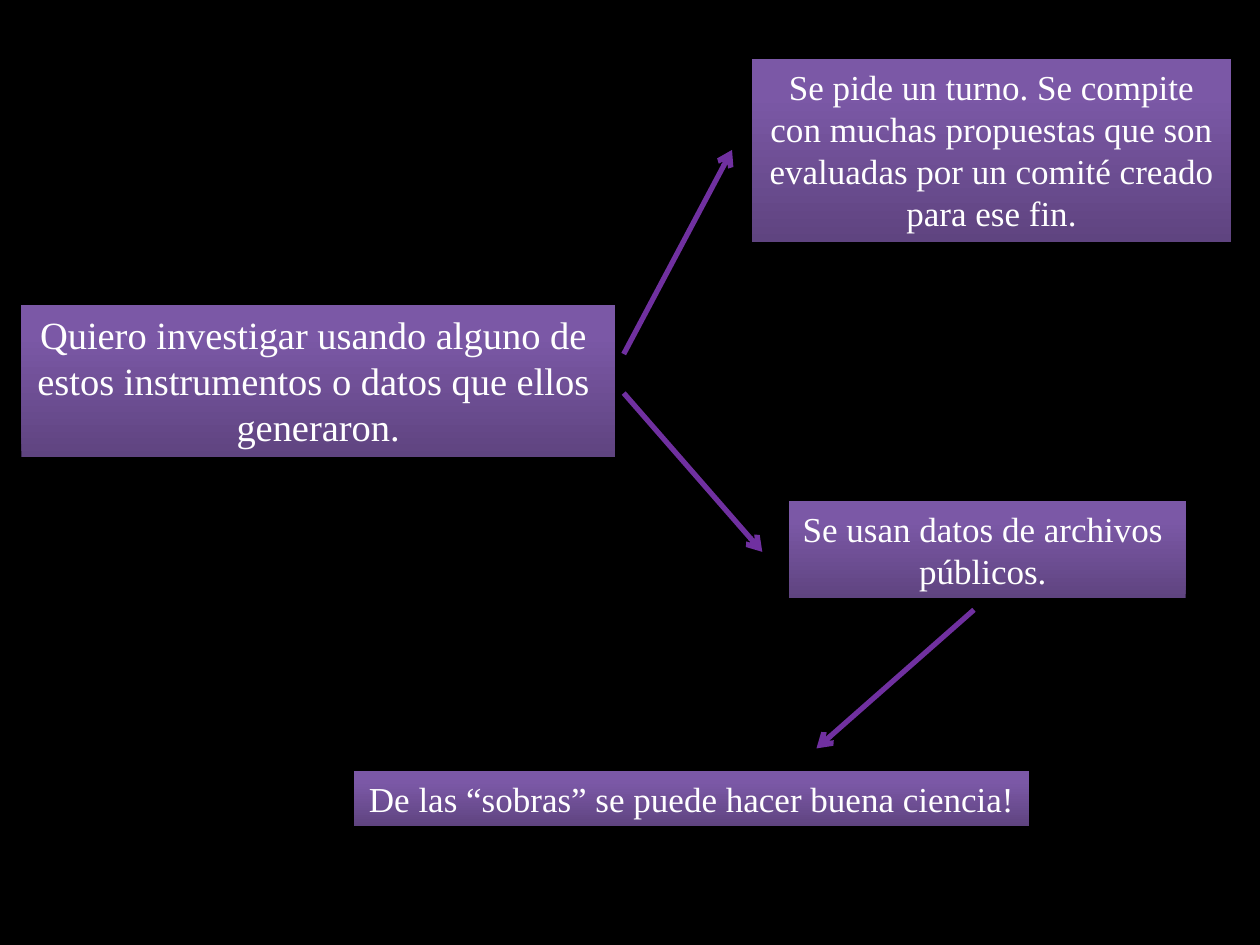
from copy import deepcopy
from dataclasses import dataclass

from lxml import etree
from pptx import Presentation
from pptx.dml.color import RGBColor
from pptx.enum.shapes import MSO_CONNECTOR, MSO_SHAPE
from pptx.enum.text import MSO_ANCHOR, MSO_AUTO_SIZE, PP_ALIGN
from pptx.oxml.ns import qn
from pptx.util import Inches, Pt

RECT = MSO_SHAPE.RECTANGLE
LINE = MSO_CONNECTOR.STRAIGHT
TOP = MSO_ANCHOR.TOP
GROW = MSO_AUTO_SIZE.SHAPE_TO_FIT_TEXT
CENTER = PP_ALIGN.CENTER
BLANK = 6
WIDE, HIGH = 10, 7.5
COLS, ROWS = 100, 75


@dataclass(frozen=True)
class Theme:
    font: str = "Times New Roman"
    back: str = "000000"
    ink: str = "FFFFFF"
    arrow: str = "7030A0"
    fade: tuple = ((0, "5F4480"), (0.8, "7B58A6"), (1, "7C57A8"))
    large: int = 22
    body: int = 20
    stroke: int = 3


def rgb(code):
    return RGBColor.from_string(code)


class Board:
    """Draws on one slide, with places given in grid columns and rows."""

    def __init__(self, deck, theme):
        self.theme = theme
        self.col = Inches(WIDE) / COLS
        self.row = Inches(HIGH) / ROWS
        self.slide = deck.slides.add_slide(deck.slide_layouts[BLANK])
        back = self.slide.background.fill
        back.solid()
        back.fore_color.rgb = rgb(theme.back)

    def spot(self, x, y):
        return round(x * self.col), round(y * self.row)

    def shade(self, shape):
        fill = shape.fill
        fill.gradient()
        fill.gradient_angle = 90
        # A new gradient has two stops; the theme has three
        stops = shape._element.spPr.find(qn("a:gradFill")).find(qn("a:gsLst"))
        stops.append(deepcopy(stops[0]))
        for stop, (place, code) in zip(fill.gradient_stops, self.theme.fade):
            stop.position = place
            stop.color.rgb = rgb(code)

    def box(self, x, y, wide, high, lines, size):
        shape = self.slide.shapes.add_shape(
            RECT, *self.spot(x, y), *self.spot(wide, high))
        shape.shadow.inherit = False
        shape.line.fill.background()
        self.shade(shape)
        frame = shape.text_frame
        frame.word_wrap = False
        frame.auto_size = GROW
        frame.vertical_anchor = TOP
        for i, line in enumerate(lines):
            par = frame.add_paragraph() if i else frame.paragraphs[0]
            par.text = line
            par.alignment = CENTER
            par.font.name = self.theme.font
            par.font.size = Pt(size)
            par.font.color.rgb = rgb(self.theme.ink)

    def arrow(self, start, end):
        link = self.slide.shapes.add_connector(
            LINE, *self.spot(*start), *self.spot(*end))
        link.line.color.rgb = rgb(self.theme.arrow)
        link.line.width = Pt(self.theme.stroke)
        etree.SubElement(link.line._get_or_add_ln(), qn("a:tailEnd"), type="arrow")
        etree.SubElement(link._element.spPr, qn("a:effectLst"))


def main():
    deck = Presentation()
    deck.slide_width, deck.slide_height = Inches(WIDE), Inches(HIGH)
    theme = Theme()
    board = Board(deck, theme)

    # Starting wish
    board.box(1.7, 24.2, 47.1, 12.1, (
        "Quiero investigar usando alguno de ",
        "estos instrumentos o datos que ellos ",
        "generaron."), theme.large)

    # First way: ask for observing time
    board.arrow((49.5, 28.1), (58.1, 11.9))
    board.box(59.7, 4.7, 38, 14.5, (
        "Se pide un turno. Se compite",
        "con muchas propuestas que son",
        "evaluadas por un comité creado",
        "para ese fin."), theme.body)

    # Second way: public archives
    board.arrow((49.5, 31.2), (60.5, 43.8))
    board.box(62.6, 39.8, 31.5, 7.7, (
        "Se usan datos de archivos ",
        "públicos. "), theme.body)

    # Outcome
    board.arrow((77.3, 48.4), (64.8, 59.4))
    board.box(28.1, 61.2, 53.6, 4.4, (
        "De las “sobras” se puede hacer buena ciencia!",), theme.body)

    deck.save("out.pptx")


if __name__ == "__main__":
    main()
